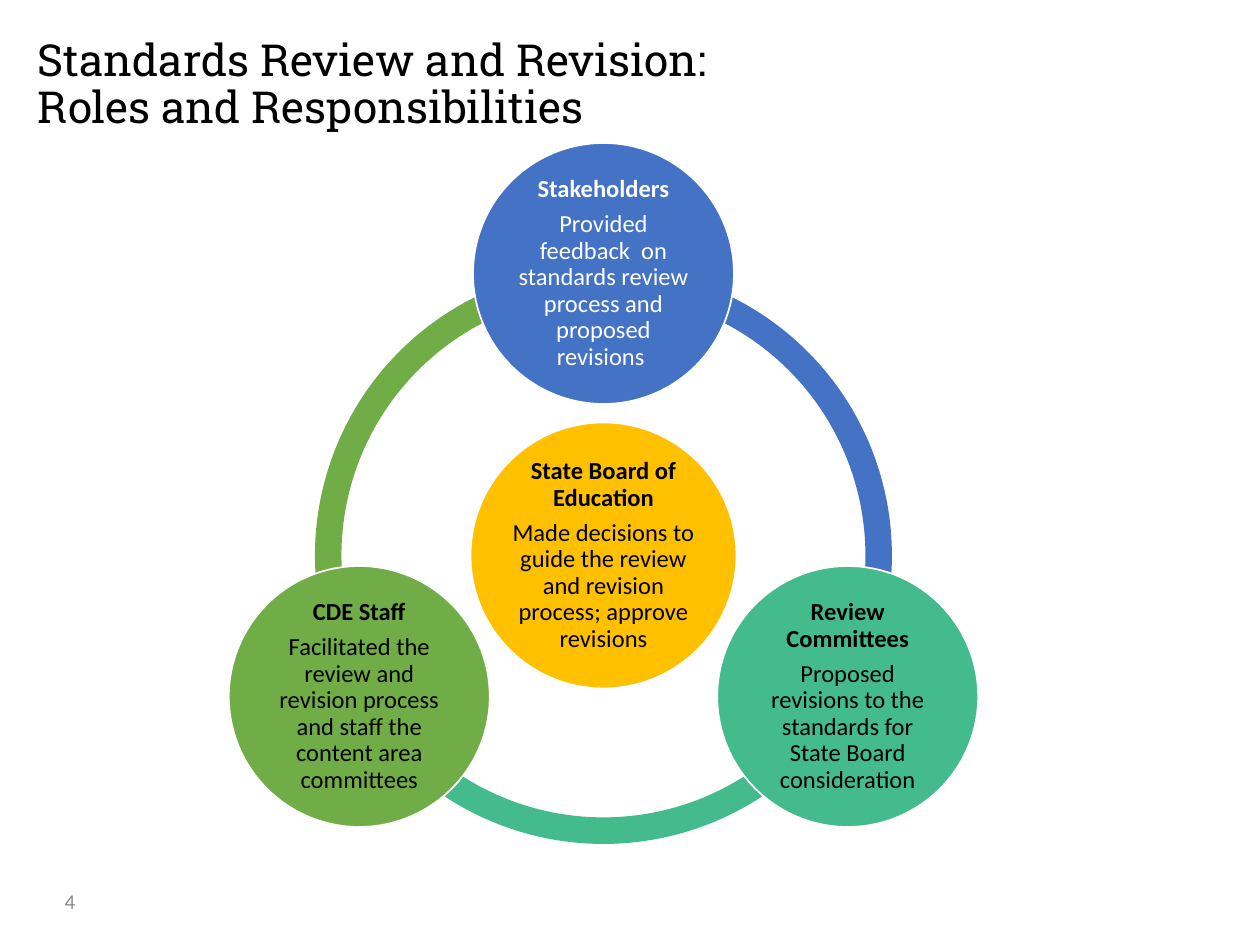
from math import cos, radians, sin

from pptx import Presentation
from pptx import util as u
from pptx.dml.color import RGBColor
from pptx.enum import shapes, text

PX = u.Inches(1) / 126
BLUE = RGBColor(0x44, 0x72, 0xC4)
TEAL = RGBColor(0x43, 0xBB, 0x8D)
GREEN = RGBColor(0x70, 0xAD, 0x47)
GOLD = RGBColor(0xFF, 0xC0, 0x00)
WHITE = RGBColor(0xFF, 0xFF, 0xFF)
BLACK = RGBColor(0x00, 0x00, 0x00)
GREY = RGBColor(0x8C, 0x8C, 0x8C)

HUB = ("State Board of Education",
       "Made decisions to guide the review and revision process; approve revisions")
ROLES = [
    (270, BLUE, WHITE, "Stakeholders",
     "Provided feedback  on standards review process and proposed revisions "),
    (30, TEAL, BLACK, "Review Committees",
     "Proposed revisions to the standards for State Board consideration"),
    (150, GREEN, BLACK, "CDE Staff",
     "Facilitated the review and revision process and staff the content area committees"),
]


def px(*lengths):
    """Turn pixel lengths into EMU."""
    return [u.Emu(round(length * PX)) for length in lengths]


def square(centre_x, centre_y, size):
    """Return the box of a square around a centre."""
    return px(centre_x - size / 2, centre_y - size / 2, size, size)


def set_margins(frame, margin):
    """Give all four sides of a text frame the same margin."""
    (emu,) = px(margin)
    frame.margin_left = frame.margin_right = emu
    frame.margin_top = frame.margin_bottom = emu


def style(paragraph, size, color, font="Calibri", bold=False):
    """Format every run of a paragraph."""
    for run in paragraph.runs:
        run.font.name = font
        run.font.size = u.Pt(size)
        run.font.bold = bold
        run.font.color.rgb = color


def add_title(slide, left, top, width, height):
    """Place the two-line heading in the title placeholder."""
    title = slide.shapes.title
    title.left, title.top, title.width, title.height = px(left, top, width, height)
    frame = title.text_frame
    frame.text = "Standards Review and Revision:\vRoles and Responsibilities"
    frame.auto_size = text.MSO_AUTO_SIZE.NONE
    frame.vertical_anchor = text.MSO_ANCHOR.TOP
    set_margins(frame, 0)
    heading = frame.paragraphs[0]
    heading.alignment = text.PP_ALIGN.LEFT
    heading.line_spacing = 0.9
    style(heading, 25.2, BLACK, "Roboto Slab")


def add_arc(slide, box, start, end, color):
    """Draw one section of the ring between two angles in degrees."""
    arc = slide.shapes.add_shape(shapes.MSO_SHAPE.BLOCK_ARC, *box)
    arc.shadow.inherit = False
    for index, value in enumerate((start * 0.6, end * 0.6, 0.046)):
        arc.adjustments[index] = value
    arc.fill.solid()
    arc.fill.fore_color.rgb = color
    arc.line.fill.background()


def add_role(slide, box, fill, color, name, duty):
    """Draw a circle with a role and what it does."""
    circle = slide.shapes.add_shape(shapes.MSO_SHAPE.OVAL, *box)
    circle.shadow.inherit = False
    circle.fill.solid()
    circle.fill.fore_color.rgb = fill
    circle.line.color.rgb = WHITE
    circle.line.width = u.Pt(1)
    frame = circle.text_frame
    frame.text = f"{name}\n{duty}"
    frame.word_wrap = True
    frame.vertical_anchor = text.MSO_ANCHOR.MIDDLE
    set_margins(frame, 2)
    for paragraph in frame.paragraphs:
        paragraph.alignment = text.PP_ALIGN.CENTER
        paragraph.line_spacing = 0.9
        style(paragraph, 14, color, bold=paragraph.text == name)
    frame.paragraphs[0].space_after = u.Pt(5)


def add_cycle(slide, left, top, size):
    """Draw the ring, the hub and the roles around it in a square box."""
    centre_x, centre_y = left + size / 2, top + size / 2
    for start, color, *_ in reversed(ROLES):
        add_arc(slide, px(left, top, size, size), start, (start + 120) % 360, color)
    add_role(slide, square(centre_x, centre_y, 266), GOLD, BLACK, *HUB)
    orbit = 282
    for angle, *role in ROLES:
        x = centre_x + orbit * cos(radians(angle))
        y = centre_y + orbit * sin(radians(angle))
        add_role(slide, square(x, y, 261), *role)


def add_page_number(slide, left, top, width, height):
    """Place the page number."""
    frame = slide.shapes.add_textbox(*px(left, top, width, height)).text_frame
    frame.text = "4"
    frame.word_wrap = True
    frame.vertical_anchor = text.MSO_ANCHOR.MIDDLE
    frame.paragraphs[0].alignment = text.PP_ALIGN.CENTER
    style(frame.paragraphs[0], 12, GREY)


def main():
    """Build the slide and save it."""
    deck = Presentation()
    deck.slide_width, deck.slide_height = px(1260, 945)
    slide = deck.slides.add_slide(deck.slide_layouts[5])
    add_title(slide, 38, 38, 1086, 98)
    add_page_number(slide, 38, 876, 64, 50)
    add_cycle(slide, 315, 267, 577)
    deck.save("out.pptx")


if __name__ == "__main__":
    main()
